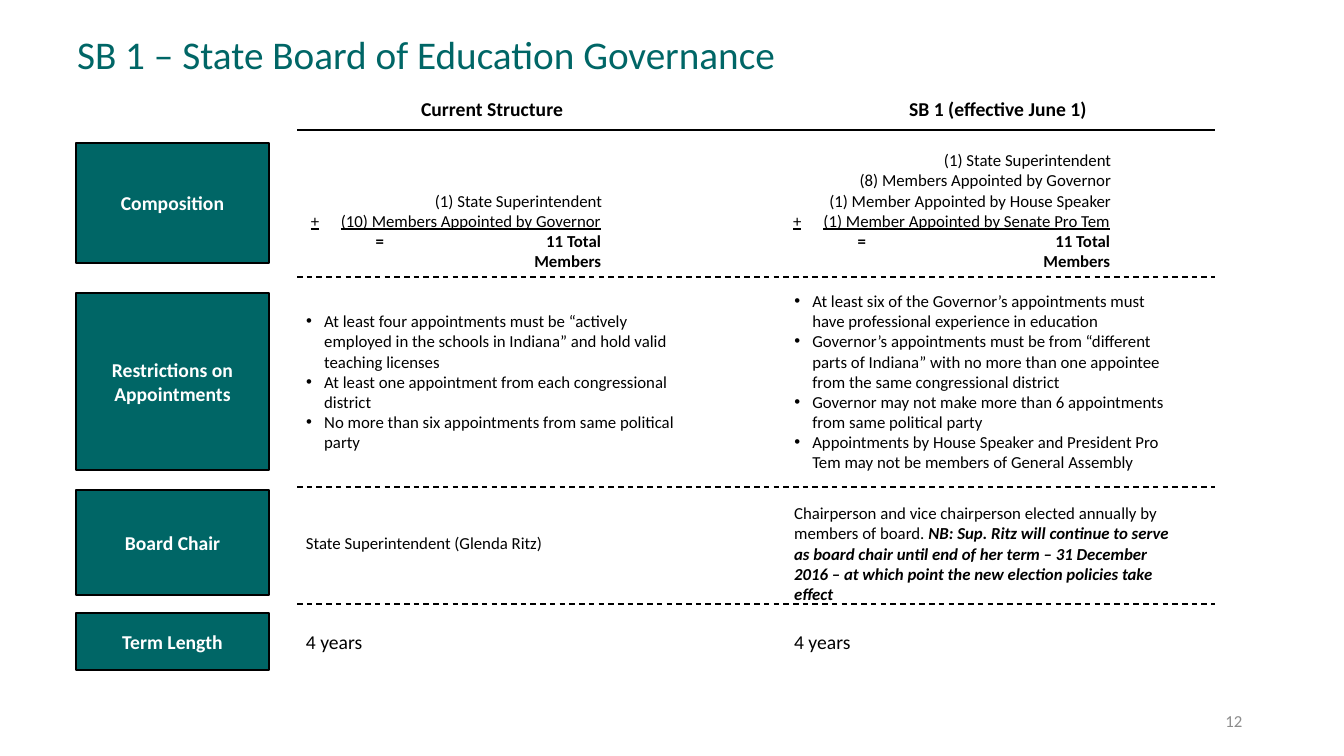
from copy import deepcopy
from lxml import etree
from pptx import Presentation
from pptx import util as u
from pptx.dml.color import RGBColor
from pptx.enum import dml, shapes, text
from pptx.oxml.ns import qn

# Content
TITLE = "SB 1 – State Board of Education Governance"
PAGE = "12"
HEADERS = [("Current Structure", 411, 308), ("SB 1 (effective June 1)", 899, 375)]
ROW_LABELS = [  # label, top, height
    ("Composition", 143, 120),
    ("Restrictions on Appointments", 293, 177),
    ("Board Chair", 490, 105),
    ("Term Length", 613, 57),
]
MEMBER_SUMS = [  # left, width, place of the equals sign, lines
    (301, 311, 73, [
        "(1) State Superintendent",
        "+\t(10) Members Appointed by Governor",
        "\t=\t11 Total\v\t\tMembers",
    ]),
    (783, 338, 73, [
        "(1) State Superintendent",
        "(8) Members Appointed by Governor",
        "(1) Member Appointed by House Speaker",
        "+\t(1) Member Appointed by Senate Pro Tem",
        "\t=\t11 Total\v\t\tMembers",
    ]),
]
RESTRICTIONS = [
    ["At least four appointments must be “actively employed in the schools in Indiana” and hold valid teaching licenses",
     "At least one appointment from each congressional district",
     "No more than six appointments from same political party"],
    ["At least six of the Governor’s appointments must have professional experience in education",
     "Governor’s appointments must be from “different parts of Indiana” with no more than one appointee from the same congressional district",
     "Governor may not make more than 6 appointments from same political party",
     "Appointments by House Speaker and President Pro Tem may not be members of General Assembly"],
]
CHAIRS = [  # text, stressed text, shift down
    ("State Superintendent (Glenda Ritz)", "", 0),
    ("Chairperson and vice chairperson elected annually by members of board. ",
     "NB: Sup. Ritz will continue to serve as board chair until end of her term – 31 December 2016 "
     "– at which point the new election policies take effect", 11),
]
TERMS = ["4 years", "4 years"]
RULES = [(130, 1.5, False), (277, 1, True), (487, 1, True), (604, 1, True)]

# Style and layout
COLORS = {"teal": "006666", "black": "000000", "white": "FFFFFF", "gray": "8C8C8C"}
FONT = "Calibri"
LABEL_X, LABEL_W = 76, 193
COLUMN_X, COLUMN_W = (296, 784), 399
RULE_X = (297, 1215)
SUM_TOP, SUM_H = 143, 133
INSET, BULLET_INDENT = 10, 18
MIDDLE, TOP, BOTTOM = text.MSO_ANCHOR.MIDDLE, text.MSO_ANCHOR.TOP, text.MSO_ANCHOR.BOTTOM
LEFT, CENTER, RIGHT = text.PP_ALIGN.LEFT, text.PP_ALIGN.CENTER, text.PP_ALIGN.RIGHT


def px(n):
    return u.Emu(round(n * 914400 / 100.8))


def color(name):
    return RGBColor.from_string(COLORS[name])


def place(shape, x, y, w, h):
    shape.left, shape.top, shape.width, shape.height = map(px, (x, y, w, h))


def style(run, size, tint="black", bold=False, italic=False, underline=False):
    font = run.font
    font.name, font.size = FONT, u.Pt(size)
    font.bold, font.italic, font.underline = bold, italic, underline
    font.color.rgb = color(tint)


def write(shape, lines, size, tint="black", bold=False, align=LEFT, anchor=MIDDLE):
    frame = shape.text_frame
    frame.text = "\n".join(lines[:1])
    for line in lines[1:]:
        frame.add_paragraph().text = line
    frame.word_wrap = True
    frame.auto_size = text.MSO_AUTO_SIZE.NONE
    frame.vertical_anchor = anchor
    for paragraph in frame.paragraphs:
        paragraph.alignment = align
        paragraph.space_before = u.Pt(0)
        for run in paragraph.runs:
            style(run, size, tint, bold)
    return frame


def textbox(x, y, w, h, lines, size, **look):
    box = slide.shapes.add_textbox(*map(px, (x, y, w, h)))
    return write(box, lines, size, **look)


def set_tabs(paragraph, stops):
    tabs = etree.SubElement(paragraph._p.get_or_add_pPr(), qn("a:tabLst"))
    for stop in stops:
        etree.SubElement(tabs, qn("a:tab"), pos=str(px(stop)), algn="r")


def set_bullet(paragraph):
    props = paragraph._p.get_or_add_pPr()
    props.set("marL", str(px(BULLET_INDENT)))
    props.set("indent", str(-px(BULLET_INDENT)))
    etree.SubElement(props, qn("a:buFont"), typeface="Arial")
    etree.SubElement(props, qn("a:buChar"), char="•")


prs = Presentation()
prs.slide_width, prs.slide_height = u.Inches(13.33), u.Inches(7.5)
slide = prs.slides.add_slide(prs.slide_layouts.get_by_name("Two Content"))
title, *lists = slide.placeholders

# Title, page number and column headers
place(title, 67, 25, 1062, 58)
write(title, [TITLE], 28, tint="teal", anchor=TOP)
textbox(950, 701, 302, 40, [PAGE], 12, tint="gray", align=RIGHT)
for header, x, w in HEADERS:
    textbox(x, 91, w, 35, [header], 14, bold=True)

# Rules between the rows
for y, weight, dashed in RULES:
    rule = slide.shapes.add_connector(
        shapes.MSO_CONNECTOR.STRAIGHT, px(RULE_X[0]), px(y), px(RULE_X[1]), px(y))
    rule.line.color.rgb = color("black")
    rule.line.width = u.Pt(weight)
    if dashed:
        rule.line.dash_style = dml.MSO_LINE.DASH
    etree.SubElement(rule._element.spPr, qn("a:effectLst"))

# Row labels
for label, y, h in ROW_LABELS:
    block = slide.shapes.add_shape(
        shapes.MSO_SHAPE.RECTANGLE, *map(px, (LABEL_X, y, LABEL_W, h)))
    block.shadow.inherit = False
    block.fill.solid()
    block.fill.fore_color.rgb = color("teal")
    block.line.color.rgb = color("black")
    block.line.width = u.Pt(1)
    write(block, [label], 14, tint="white", bold=True, align=CENTER)

# Composition: addends, underlined last addend, bold total
for x, w, equals_x, lines in MEMBER_SUMS:
    frame = textbox(x, SUM_TOP, w, SUM_H, lines, 12, align=RIGHT, anchor=BOTTOM)
    *_, last_addend, total = frame.paragraphs
    edge = w - 2 * INSET - 1
    for paragraph, stops in ((last_addend, [edge]), (total, [equals_x, edge])):
        paragraph.alignment = LEFT
        set_tabs(paragraph, stops)
    for run in last_addend.runs:
        run.font.underline = True
    for run in total.runs:
        run.font.bold = True
    for line_break in total._p.findall(qn("a:br")):
        line_break.insert(0, deepcopy(total.runs[0]._r.rPr))

# Restrictions, chair and term, centred on their labels
(_, list_y, list_h), (_, chair_y, chair_h), (_, term_y, term_h) = ROW_LABELS[1:]
for x, holder, restrictions, chair, term in zip(COLUMN_X, lists, RESTRICTIONS, CHAIRS, TERMS):
    place(holder, x, list_y, COLUMN_W, list_h)
    for paragraph in write(holder, restrictions, 12).paragraphs:
        set_bullet(paragraph)
    plain, stressed, shift = chair
    frame = textbox(x, chair_y + shift, COLUMN_W, chair_h, [plain], 12)
    if stressed:
        run = frame.paragraphs[0].add_run()
        run.text = stressed
        style(run, 12, bold=True, italic=True)
    textbox(x, term_y, COLUMN_W, term_h, [term], 14)

prs.save("out.pptx")
